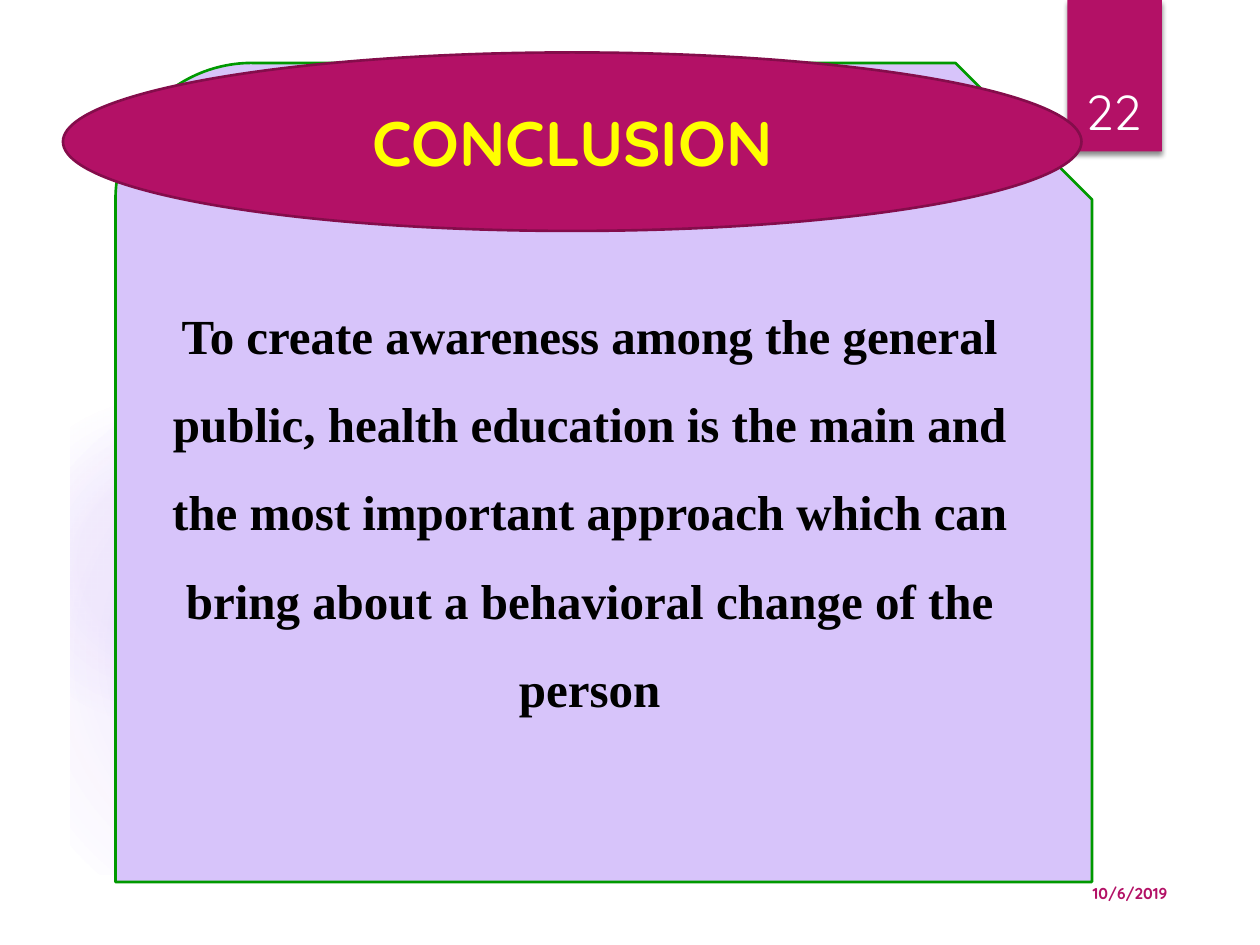
from lxml.etree import SubElement
from pptx import Presentation
from pptx.dml.color import RGBColor
from pptx.enum.shapes import MSO_SHAPE
from pptx.enum.text import MSO_ANCHOR, PP_ALIGN
from pptx.oxml import parse_xml
from pptx.oxml.ns import nsdecls, qn
from pptx.util import Pt

TITLE = "CONCLUSION"
BODY = ("To create awareness among the general public, health education is the main and "
        "the most important approach which can bring about a behavioral change of the person")
DATE = "10/6/2019"
NUMBER = "22"
HEAD_FONT, BODY_FONT = "Quicksand", "Times New Roman"
COLORS = {"white": "FFFFFF", "black": "000000", "glow": "9B6BF2", "magenta": "B31166",
          "plum": "840D4B", "lilac": "D7C4FA", "green": "009900", "yellow": "FFFF00"}
GLOWS = [
    ((0, 228, 186, 186), [(0, 8), (36, 8), (72, 0)]),
    ((0, 210, 330, 330), [(0, 11), (36, 10), (75, 0)]),
]
FRAME_OUTER = [(0, 0), (0, 540), (720, 540), (720, 0)]
FRAME_INNER = [(680.5, 500.5), (40.5, 500.5), (40.5, 40.5), (680.5, 40.5)]


def rgb(name):
    return RGBColor.from_string(COLORS[name])


def paint(sp, fill, line=None):
    sp.shadow.inherit = False
    sp.fill.solid()
    sp.fill.fore_color.rgb = rgb(fill)
    if line:
        sp.line.color.rgb = rgb(line)
        sp.line.width = Pt(1.5)
    else:
        sp.line.fill.background()
    return sp


def add_shape(s, kind, box, fill, line=None):
    return paint(s.shapes.add_shape(kind, *map(Pt, box)), fill, line)


def add_frame(s, outer, inner):
    fb = s.shapes.build_freeform(*outer[0], scale=Pt(1))
    fb.add_line_segments(outer[1:], close=True)
    fb.move_to(*inner[0])
    fb.add_line_segments(inner[1:], close=True)
    paint(fb.convert_to_shape(), "white")


def add_glow(s, box, stops):
    sp = add_shape(s, MSO_SHAPE.OVAL, box, "glow")
    gs = "".join(
        f'<a:gs pos="{pos * 1000}"><a:srgbClr val="{COLORS["glow"]}">'
        f'<a:alpha val="{alpha * 1000}"/></a:srgbClr></a:gs>' for pos, alpha in stops)
    grad = parse_xml(
        f'<a:gradFill {nsdecls("a")}><a:gsLst>{gs}</a:gsLst><a:path path="circle">'
        '<a:fillToRect l="50000" t="50000" r="50000" b="50000"/></a:path></a:gradFill>')
    solid = sp.element.spPr.find(qn("a:solidFill"))
    solid.getparent().replace(solid, grad)


def add_shadow(sp):
    effects = sp.element.spPr.find(qn("a:effectLst"))
    shadow = SubElement(effects, qn("a:outerShdw"), blurRad=str(Pt(3)), dist=str(Pt(2)),
                        dir="5400000", rotWithShape="0")
    color = SubElement(shadow, qn("a:srgbClr"), val=COLORS["black"])
    SubElement(color, qn("a:alpha"), val="45000")


def set_text(sp, text, font, size, color, bold=True, align=PP_ALIGN.CENTER,
             anchor=MSO_ANCHOR.MIDDLE):
    tf = sp.text_frame
    tf.word_wrap = True
    tf.vertical_anchor = anchor
    p = tf.paragraphs[0]
    p.text = text
    p.alignment = align
    p.font.name, p.font.size, p.font.bold = font, Pt(size), bold
    p.font.color.rgb = rgb(color)
    return tf


def add_label(s, box, *args, **kwargs):
    set_text(s.shapes.add_textbox(*map(Pt, box)), *args, anchor=MSO_ANCHOR.BOTTOM, **kwargs)


prs = Presentation()
prs.slide_width, prs.slide_height = Pt(720), Pt(540)
s = prs.slides.add_slide(prs.slide_layouts[5])

for box, stops in GLOWS:
    add_glow(s, box, stops)
add_frame(s, FRAME_OUTER, FRAME_INNER)

add_shadow(add_shape(s, MSO_SHAPE.RECTANGLE, (610, 0, 54, 86.5), "magenta"))

card = add_shape(s, MSO_SHAPE.SNIP_ROUND_RECTANGLE, (66, 36, 558, 468), "lilac", "green")
tf = set_text(card, BODY, BODY_FONT, 28, "black", anchor=MSO_ANCHOR.TOP)
tf.margin_top = Pt(99)
tf.paragraphs[0].line_spacing = Pt(50.4)

banner = (36, 30, 582, 102)
add_shape(s, MSO_SHAPE.OVAL, banner, "magenta", "plum")
title = s.shapes.title
title.left, title.top, title.width, title.height = map(Pt, banner)
set_text(title, TITLE, HEAD_FONT, 36, "yellow")
title.element.getparent().append(title.element)

add_label(s, (596, 501.5, 78, 18), DATE, HEAD_FONT, 9, "magenta", align=PP_ALIGN.RIGHT)
add_label(s, (605, 23, 62.5, 60.5), NUMBER, HEAD_FONT, 28, "white", bold=False)

prs.save("out.pptx")
